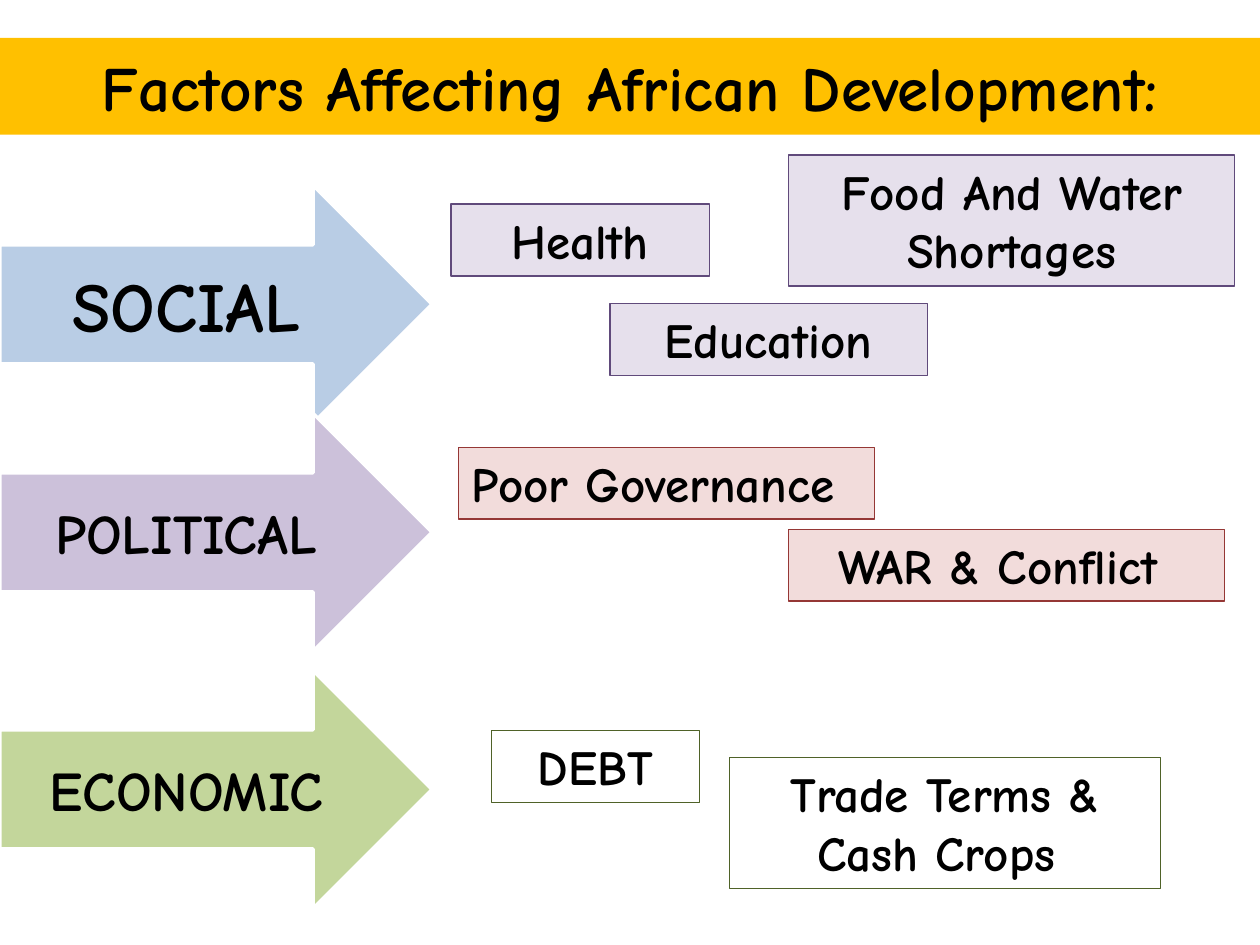
from pptx import Presentation
from pptx.dml.color import RGBColor
from pptx.enum.shapes import MSO_SHAPE
from pptx.enum.text import MSO_ANCHOR, MSO_AUTO_SIZE, PP_ALIGN
from pptx.util import Inches, Pt

RECTANGLE, RIGHT_ARROW = MSO_SHAPE.RECTANGLE, MSO_SHAPE.RIGHT_ARROW
TOP, MIDDLE = MSO_ANCHOR.TOP, MSO_ANCHOR.MIDDLE
LEFT, CENTER = PP_ALIGN.LEFT, PP_ALIGN.CENTER
GROW = MSO_AUTO_SIZE.SHAPE_TO_FIT_TEXT

FONT = "Comic Neue"
SLIDE_WIDTH, SLIDE_HEIGHT = 10, 7.5
ARROW_WIDTH, ARROW_HEIGHT = 3.43, 1.89
LINE_HEIGHTS = {1: 0.57, 2: 1.04}  # factor box height by lines of text

TITLE = "Factors Affecting African Development:"

# Each factor: text, left, top, width, lines of text, alignment
CATEGORIES = [
    {"name": "SOCIAL", "size": 40, "top": 1.47, "arrow": "B9CDE5",
     "fill": "E6E0EC", "line": "604A7B",
     "factors": [("Health", 3.58, 1.62, 2.05, 1, CENTER),
                 ("Education", 4.84, 2.41, 2.52, 1, CENTER),
                 ("Food And Water Shortages", 6.26, 1.23, 3.54, 2, CENTER)]},
    {"name": "POLITICAL", "size": 32, "top": 3.28, "arrow": "CCC1DA",
     "fill": "F2DCDB", "line": "953735",
     "factors": [("Poor Governance", 3.64, 3.55, 3.3, 1, LEFT),
                 ("WAR & Conflict ", 6.26, 4.2, 3.46, 1, CENTER)]},
    {"name": "ECONOMIC", "size": 32, "top": 5.32, "arrow": "C3D69B",
     "fill": None, "line": "4F6228",
     "factors": [("DEBT", 3.9, 5.8, 1.65, 1, CENTER),
                 ("Trade Terms & Cash Crops ", 5.79, 6.01, 3.42, 2, CENTER)]},
]


def color(hex_string):
    return RGBColor.from_string(hex_string)


def add_block(slide, kind, box, text, size, fill=None, line=None,
              line_width=0.75, anchor=MIDDLE, align=CENTER):
    block = slide.shapes.add_shape(kind, *(Inches(value) for value in box))
    block.shadow.inherit = False
    if fill:
        block.fill.solid()
        block.fill.fore_color.rgb = color(fill)
    else:
        block.fill.background()
    if line:
        block.line.color.rgb = color(line)
        block.line.width = Pt(line_width)
    else:
        block.line.fill.background()

    frame = block.text_frame
    frame.word_wrap = True
    frame.vertical_anchor = anchor
    paragraph = frame.paragraphs[0]
    paragraph.text = text
    paragraph.alignment = align
    paragraph.font.name = FONT
    paragraph.font.size = Pt(size)
    paragraph.font.bold = True
    paragraph.font.color.rgb = color("000000")
    return block


def main():
    deck = Presentation()
    deck.slide_width, deck.slide_height = Inches(SLIDE_WIDTH), Inches(SLIDE_HEIGHT)
    slide = deck.slides.add_slide(deck.slide_layouts[6])

    # Title band
    add_block(slide, RECTANGLE, (0, 0.3, SLIDE_WIDTH, 0.77), TITLE, 36, "FFC000")

    # Category arrows down the left edge
    for category in CATEGORIES:
        add_block(slide, RIGHT_ARROW, (0, category["top"], ARROW_WIDTH, ARROW_HEIGHT),
                  category["name"], category["size"], category["arrow"], "FFFFFF", 2)

    # Factor boxes beside each arrow
    for category in CATEGORIES:
        for text, left, top, width, lines, align in category["factors"]:
            factor = add_block(slide, RECTANGLE, (left, top, width, LINE_HEIGHTS[lines]),
                               text, 28, category["fill"], category["line"],
                               anchor=TOP, align=align)
            factor.text_frame.auto_size = GROW

    deck.save("out.pptx")


if __name__ == "__main__":
    main()
